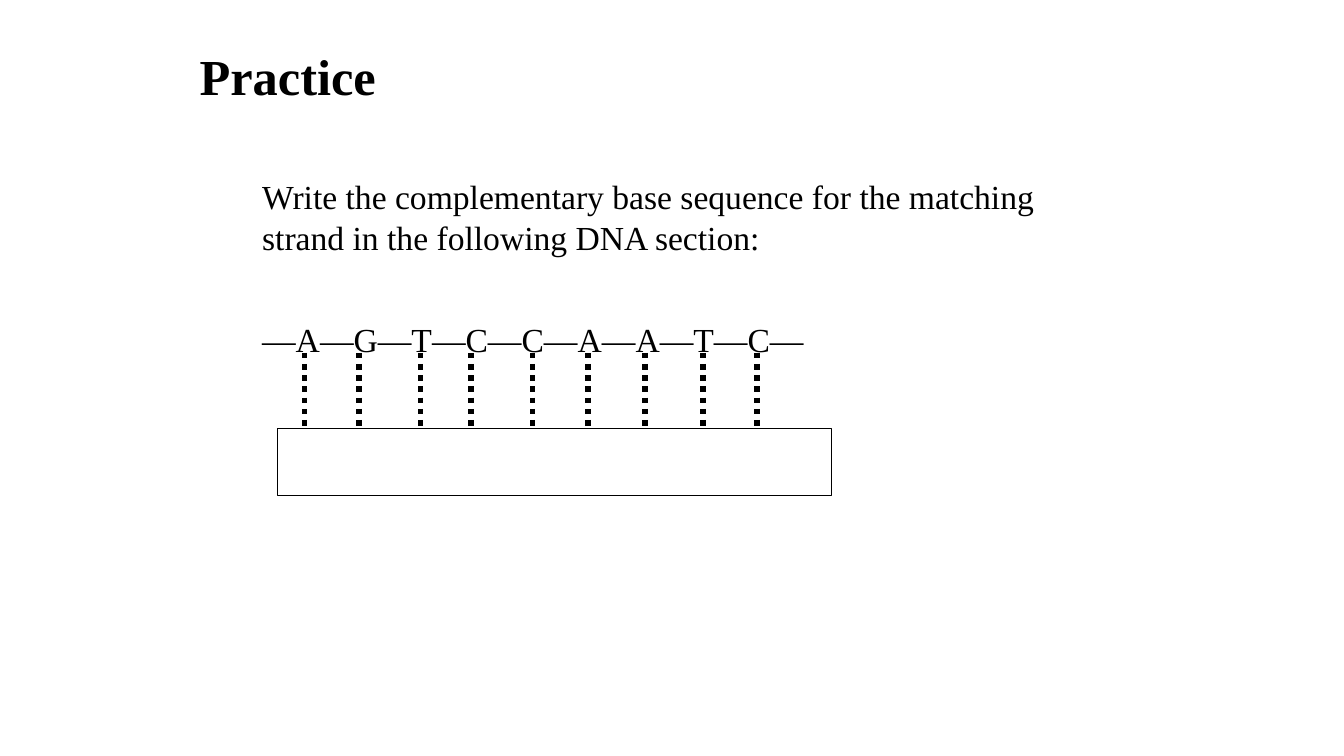
from pptx import Presentation
from pptx import util as u
from pptx.dml.color import RGBColor
from pptx.enum import dml, shapes, text
from pptx.oxml.ns import qn
from lxml import etree

PX = 9144
BLACK = RGBColor(0, 0, 0)
FONT = "Times New Roman"
BONDS = (302, 356, 417, 467, 528, 583, 640, 697, 751)
STRAND = "—" + "—".join("AGTCCAATC") + "—"


def px(*sizes):
    return [u.Emu(size * PX) for size in sizes]


def style(para, size, bold=False, before=0, spacing=1.0):
    para.font.name = FONT
    para.font.size = u.Pt(size)
    para.font.bold = bold
    para.font.color.rgb = BLACK
    para.alignment = text.PP_ALIGN.LEFT
    para.space_before = u.Pt(before)
    para.line_spacing = spacing


def add_title(slide, words, box):
    title = slide.shapes.title
    title.left, title.top, title.width, title.height = px(*box)
    frame = title.text_frame
    frame.text = words
    frame.auto_size = text.MSO_AUTO_SIZE.NONE
    frame.vertical_anchor = text.MSO_ANCHOR.MIDDLE
    style(frame.paragraphs[0], 36, bold=True, spacing=0.9)


def add_body(slide, items, box):
    frame = slide.shapes.add_textbox(*px(*box)).text_frame
    frame.word_wrap = True
    frame.margin_left = frame.margin_right = 0
    frame.text = "\n".join(words for words, before in items)
    for para, (words, before) in zip(frame.paragraphs, items):
        style(para, 24, before=before)


def add_bond(slide, x, top, end):
    bond = slide.shapes.add_connector(
        shapes.MSO_CONNECTOR.STRAIGHT, *px(x, top, x, end))
    bond.line.color.rgb = BLACK
    bond.line.width = u.Pt(4)
    bond.line.dash_style = dml.MSO_LINE.ROUND_DOT
    etree.SubElement(bond._element.spPr, qn("a:effectLst"))


def add_frame(slide, box):
    rect = slide.shapes.add_shape(shapes.MSO_SHAPE.RECTANGLE, *px(*box))
    rect.shadow.inherit = False
    rect.fill.background()
    rect.line.color.rgb = BLACK
    rect.line.width = u.Pt(0.75)


def main():
    deck = Presentation()
    deck.slide_width, deck.slide_height = px(1333, 750)
    slide = deck.slides.add_slide(deck.slide_layouts[5])
    add_title(slide, "Practice", (188, 25, 892, 108))
    add_body(slide, [
        ("Write the complementary base sequence for the matching "
         "strand in the following DNA section:", 0),
        (STRAND, 44),
    ], (260, 170, 805, 530))
    for x in BONDS:
        add_bond(slide, x, 350, 425)
    add_frame(slide, (275, 425, 550, 67))
    deck.save("out.pptx")


if __name__ == "__main__":
    main()
